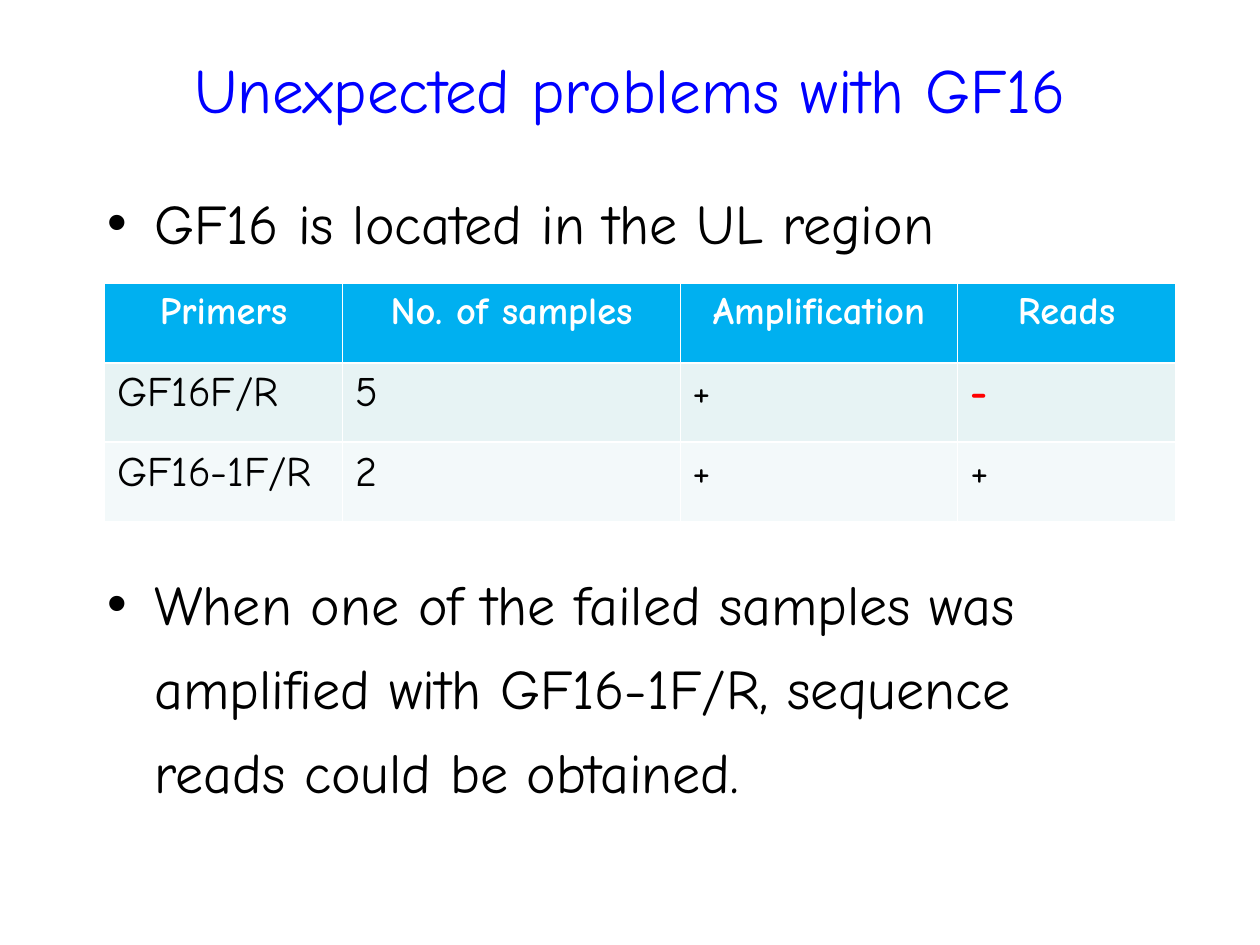
import dataclasses

import pptx
import pptx.dml.color
import pptx.enum.text
import pptx.util

Inches = pptx.util.Inches
Pt = pptx.util.Pt
PP_ALIGN = pptx.enum.text.PP_ALIGN

FONT = "Comic Neue"
COLORS = {
    "title": "0000FF",
    "text": "000000",
    "header_text": "FFFFFF",
    "failed": "FF0000",
    "header": "00B0F0",
    "odd_row": "E7F3F4",
    "even_row": "F3F9FA",
}


@dataclasses.dataclass(frozen=True)
class TextStyle:
    size: float
    color: str = "text"
    bold: bool = False
    align: PP_ALIGN = PP_ALIGN.LEFT


@dataclasses.dataclass(frozen=True)
class TableRow:
    fill: str
    style: TextStyle
    values: tuple[str, ...]


TITLE = TextStyle(36, "title", align=PP_ALIGN.CENTER)
BULLET = TextStyle(32)
HEADER = TextStyle(22, "header_text", bold=True, align=PP_ALIGN.CENTER)
RESULT = TextStyle(24)
FAILED = TextStyle(24, "failed", bold=True)

BULLETS = (
    "GF16 is located in the UL region",
    "When one of the failed samples was amplified with GF16-1F/R, "
    "sequence reads could be obtained.",
)
COLUMN_WIDTHS = (1.89, 2.68, 2.2, 1.73)
ROW_HEIGHT = 0.63
PRIMER_ROWS = (
    TableRow("header", HEADER, ("Primers", "No. of samples", "Amplification", "Reads")),
    TableRow("odd_row", RESULT, ("GF16F/R", "5", "+", "-")),
    TableRow("even_row", RESULT, ("GF16-1F/R", "2", "+", "+")),
)


def rgb(name: str) -> pptx.dml.color.RGBColor:
    return pptx.dml.color.RGBColor.from_string(COLORS[name])


def write(paragraph, text: str, style: TextStyle) -> None:
    paragraph.text = text
    paragraph.alignment = style.align
    paragraph.font.name = FONT
    paragraph.font.size = Pt(style.size)
    paragraph.font.bold = style.bold
    paragraph.font.color.rgb = rgb(style.color)


def place(shape, left: float, top: float, width: float, height: float) -> None:
    shape.left, shape.top = Inches(left), Inches(top)
    shape.width, shape.height = Inches(width), Inches(height)


def add_primer_table(slide, left: float, top: float) -> None:
    primers = slide.shapes.add_table(
        len(PRIMER_ROWS), len(COLUMN_WIDTHS), Inches(left), Inches(top),
        Inches(sum(COLUMN_WIDTHS)), Inches(ROW_HEIGHT * len(PRIMER_ROWS)),
    ).table
    for column, width in zip(primers.columns, COLUMN_WIDTHS):
        column.width = Inches(width)
    for table_row, row in zip(primers.rows, PRIMER_ROWS):
        table_row.height = Inches(ROW_HEIGHT)
        for cell, value in zip(table_row.cells, row.values):
            cell.fill.solid()
            cell.fill.fore_color.rgb = rgb(row.fill)
            style = FAILED if value == "-" else row.style
            write(cell.text_frame.paragraphs[0], value, style)


def main() -> None:
    prs = pptx.Presentation()
    prs.slide_width, prs.slide_height = Inches(10), Inches(7.5)
    slide = prs.slides.add_slide(prs.slide_layouts[1])

    # Title
    title = slide.shapes.title
    place(title, 0.75, 0.21, 8.5, 0.87)
    heading = title.text_frame.paragraphs[0]
    write(heading, "Unexpected problems with GF16", TITLE)
    heading.line_spacing = 1.2

    # Bullets, with room for the table between them
    body = slide.placeholders[1]
    place(body, 0.75, 1.31, 8.5, 5.43)
    findings = body.text_frame
    findings.auto_size = pptx.enum.text.MSO_AUTO_SIZE.NONE
    findings.add_paragraph()
    for paragraph, text in zip(findings.paragraphs, BULLETS):
        write(paragraph, text, BULLET)
        paragraph.line_spacing = 1.25
    findings.paragraphs[1].space_before = Pt(170)

    # Primer results
    add_primer_table(slide, 0.83, 2.25)

    prs.save("out.pptx")


if __name__ == "__main__":
    main()
